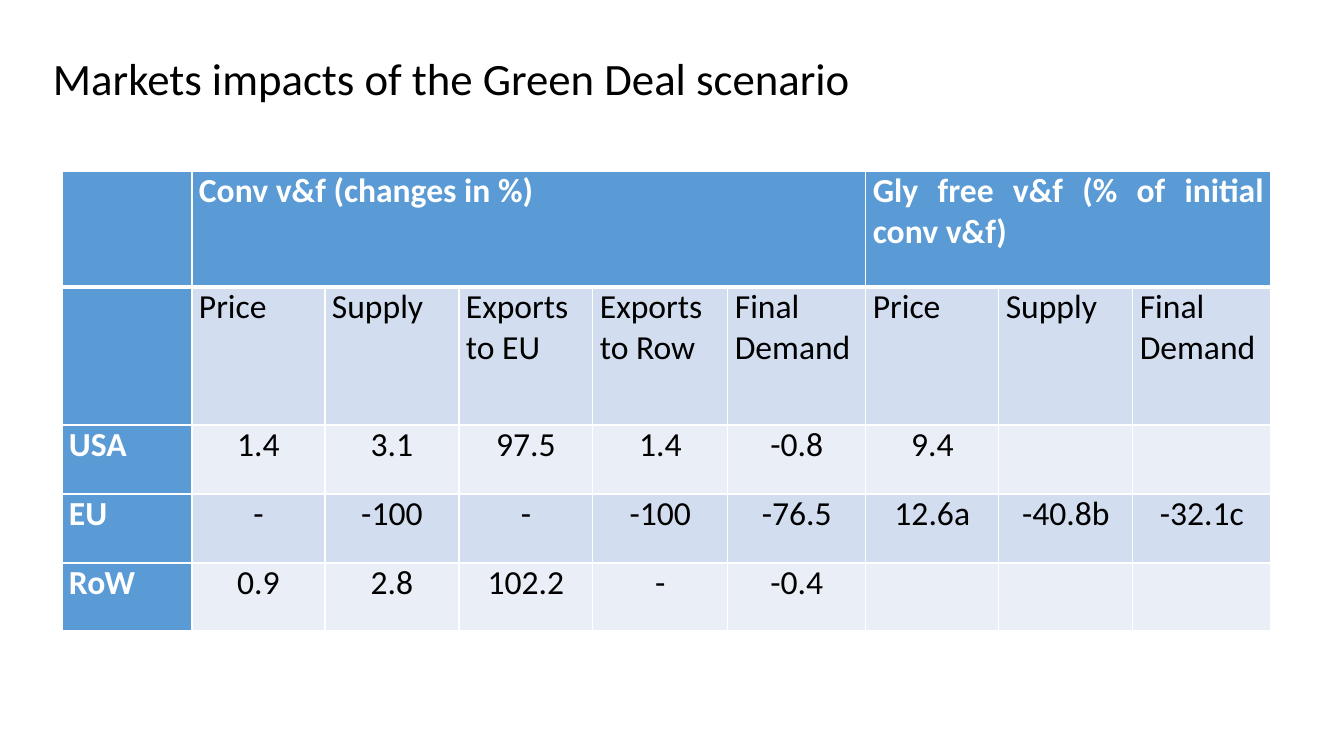
import pptx
import pptx.dml.color
import pptx.enum.text
import pptx.oxml
import pptx.oxml.ns
import pptx.util

TITLE = "Markets impacts of the Green Deal scenario"
ROWS = [
    ["", "Conv v&f (changes in %)", "", "", "", "",
     "Gly free v&f (% of initial conv v&f)", "", ""],
    ["", "Price", "Supply", "Exports to EU", "Exports to Row", "Final Demand",
     "Price", "Supply", "Final Demand"],
    ["USA", "1.4", "3.1", "97.5", "1.4", "-0.8", "9.4", "", ""],
    ["EU", "-", "-100", "-", "-100", "-76.5", "12.6a", "-40.8b", "-32.1c"],
    ["RoW", "0.9", "2.8", "102.2", "-", "-0.4", "", "", ""],
]
HEADER_SPANS = [(1, 5), (6, 8)]
COLUMN_WIDTHS = [130, 133, 134, 134, 135, 138, 133, 134, 138]
ROW_HEIGHTS = [116, 138, 69, 69, 68]
TABLE_LEFT, TABLE_TOP = 62, 171
HEADER_FILL, BAND_FILLS = "5B9BD5", ["EAEFF7", "D2DEEF"]
WHITE, BLACK = "FFFFFF", "000000"
FONT = "Calibri"
ALIGN = pptx.enum.text.PP_ALIGN


def px(length):
    return pptx.util.Emu(round(length * 914400 / 100.8))


def color(value):
    return pptx.dml.color.RGBColor.from_string(value)


def add_span(para, text, size, ink, bold=False):
    span = para.add_run()
    span.text = text
    span.font.name = FONT
    span.font.size = pptx.util.Pt(size)
    span.font.bold = bold
    span.font.color.rgb = color(ink)


def set_borders(cell, row):
    """White hairlines, with a heavier rule below the header row."""
    properties = cell._tc.get_or_add_tcPr()
    widths = {"lnL": 1, "lnR": 1, "lnT": 3 if row == 1 else 1, "lnB": 3 if row == 0 else 1}
    for side, width in widths.items():
        properties.append(pptx.oxml.parse_xml(
            f'<a:{side} {pptx.oxml.ns.nsdecls("a")} w="{pptx.util.Pt(width)}">'
            f'<a:solidFill><a:srgbClr val="{WHITE}"/></a:solidFill></a:{side}>'))


def fill_cell(cell, row, column, text):
    heading = row == 0 or column == 0
    set_borders(cell, row)
    cell.fill.solid()
    cell.fill.fore_color.rgb = color(HEADER_FILL if heading else BAND_FILLS[row % 2])
    cell.margin_left = cell.margin_right = px(7)
    cell.margin_top = cell.margin_bottom = 0
    if text:
        para = cell.text_frame.paragraphs[0]
        para.alignment = ALIGN.JUSTIFY if heading or row == 1 else ALIGN.CENTER
        add_span(para, text, 24, WHITE if heading else BLACK, heading)


def add_market_table(page):
    frame = page.shapes.add_table(
        len(ROWS), len(COLUMN_WIDTHS), px(TABLE_LEFT), px(TABLE_TOP),
        px(sum(COLUMN_WIDTHS)), px(sum(ROW_HEIGHTS)))
    table = frame.table
    for column, width in zip(table.columns, COLUMN_WIDTHS):
        column.width = px(width)
    for row, height in zip(table.rows, ROW_HEIGHTS):
        row.height = px(height)
    for row, texts in enumerate(ROWS):
        for column, text in enumerate(texts):
            fill_cell(table.cell(row, column), row, column, text)
    for first, last in HEADER_SPANS:
        table.cell(0, first).merge(table.cell(0, last))


def add_title(page):
    box = page.shapes.add_textbox(px(43), px(46), px(1261), px(65))
    box.text_frame.word_wrap = True
    add_span(box.text_frame.paragraphs[0], TITLE, 32, BLACK)


def main():
    deck = pptx.Presentation()
    deck.slide_width, deck.slide_height = px(1344), px(756)
    page = deck.slides.add_slide(deck.slide_layouts[6])
    add_market_table(page)
    add_title(page)
    deck.save("out.pptx")


if __name__ == "__main__":
    main()
